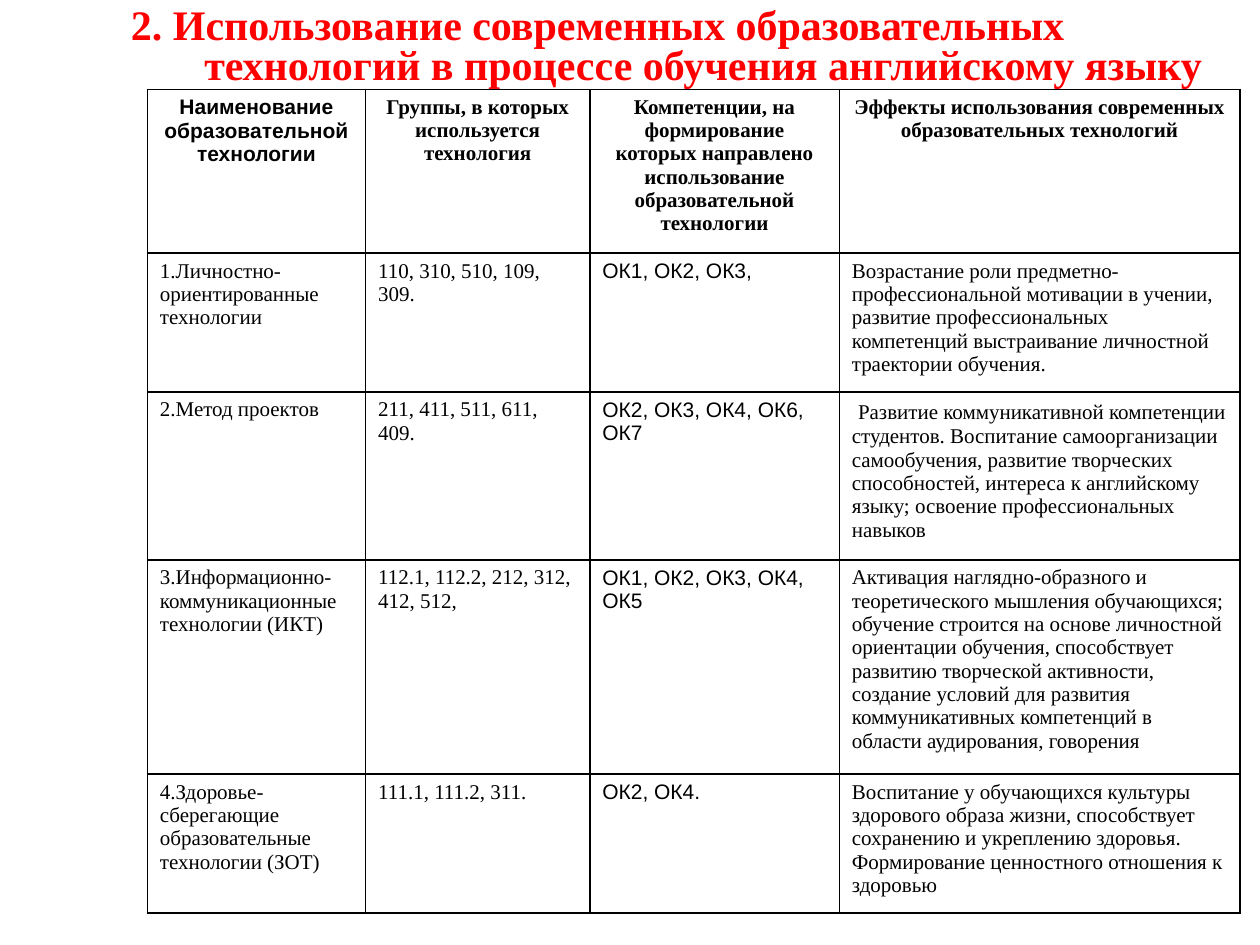
from lxml import etree
from pptx import Presentation, util as u
from pptx.dml.color import RGBColor
from pptx.enum import text
from pptx.oxml.ns import qn

SERIF, SANS = "Times New Roman", "Arial"
BLACK, RED, WHITE = "000000", "FF0000", "FFFFFF"
LEFT, CENTER, JUSTIFY = text.PP_ALIGN.LEFT, text.PP_ALIGN.CENTER, text.PP_ALIGN.JUSTIFY

TITLE = ("2. Использование современных образовательных технологий "
         "в процессе обучения английскому языку")
COLUMN_WIDTHS = [4.4, 4.52, 5.03, 8.08]
ROW_HEIGHTS = [3.15, 2.67, 3.23, 4.32, 2.67]
HEADERS = [
    "Наименование образовательной технологии",
    "Группы, в которых используется технология",
    "Компетенции, на формирование которых направлено использование "
    "образовательной технологии",
    "Эффекты использования современных образовательных технологий",
]
TECHNOLOGIES = [
    ["1.Личностно-ориентированные технологии", "110, 310, 510, 109, 309.",
     "ОК1, ОК2, ОК3,",
     "Возрастание роли предметно-профессиональной мотивации в учении, развитие "
     "профессиональных компетенций выстраивание личностной траектории обучения."],
    ["2.Метод проектов", "211, 411, 511, 611, 409.",
     "ОК2, ОК3, ОК4, ОК6, ОК7",
     "Развитие коммуникативной компетенции студентов. Воспитание самоорганизации "
     "самообучения, развитие творческих способностей, интереса к английскому языку; "
     "освоение профессиональных навыков"],
    ["3.Информационно-коммуникационные технологии (ИКТ)",
     "112.1, 112.2, 212, 312, 412, 512,", "ОК1, ОК2, ОК3, ОК4, ОК5",
     "Активация наглядно-образного и теоретического мышления обучающихся; обучение "
     "строится на основе личностной ориентации обучения, способствует развитию "
     "творческой активности, создание условий для развития коммуникативных "
     "компетенций в области аудирования, говорения"],
    ["4.Здоровье-сберегающие образовательные технологии (ЗОТ)",
     "111.1, 111.2, 311.", "ОК2, ОК4.",
     "Воспитание у обучающихся культуры здорового образа жизни, способствует "
     "сохранению и укреплению здоровья. Формирование ценностного отношения к здоровью"],
]


def color(hex_value):
    return RGBColor.from_string(hex_value)


def add_text(paragraph, content, *, font=SERIF, size=12, bold=False,
             hex_value=BLACK, align=LEFT):
    """Append a formatted run to a paragraph."""
    paragraph.alignment = align
    run = paragraph.add_run()
    run.text = content
    run.font.name = font
    run.font.size = u.Pt(size)
    run.font.bold = bold
    run.font.color.rgb = color(hex_value)


def style_cell(cell):
    """Give a cell a white fill and thin black borders."""
    cell.fill.solid()
    cell.fill.fore_color.rgb = color(WHITE)
    properties = cell._tc.get_or_add_tcPr()
    for position, side in enumerate(("lnL", "lnR", "lnT", "lnB")):
        border = etree.Element(qn(f"a:{side}"), w=str(u.Pt(1)))
        fill = etree.SubElement(border, qn("a:solidFill"))
        etree.SubElement(fill, qn("a:srgbClr"), val=BLACK)
        properties.insert(position, border)


def add_title(slide, left, top, width, height):
    shape = slide.shapes.add_textbox(u.Cm(left), u.Cm(top), u.Cm(width), u.Cm(height))
    frame = shape.text_frame
    frame.word_wrap = True
    frame.vertical_anchor = text.MSO_ANCHOR.MIDDLE
    paragraph = frame.paragraphs[0]
    paragraph.line_spacing = 0.8
    # Hanging indent for the second line
    indent = u.Cm(1.48)
    properties = paragraph._p.get_or_add_pPr()
    properties.set("marL", str(indent))
    properties.set("indent", str(-indent))
    add_text(paragraph, TITLE, size=24, bold=True, hex_value=RED)


def add_technology_table(slide, left, top):
    shape = slide.shapes.add_table(
        len(ROW_HEIGHTS), len(COLUMN_WIDTHS), u.Cm(left), u.Cm(top),
        u.Cm(sum(COLUMN_WIDTHS)), u.Cm(sum(ROW_HEIGHTS)))
    table = shape.table
    table.horz_banding = False
    for column, width in zip(table.columns, COLUMN_WIDTHS):
        column.width = u.Cm(width)
    for row, height in zip(table.rows, ROW_HEIGHTS):
        row.height = u.Cm(height)

    # Header row: only the first heading is sans serif
    for index, heading in enumerate(HEADERS):
        cell = table.cell(0, index)
        style_cell(cell)
        add_text(cell.text_frame.paragraphs[0], heading, bold=True, align=CENTER,
                 font=SANS if index == 0 else SERIF)

    # Body rows: names justified, competences sans serif
    formats = [{"align": JUSTIFY}, {}, {"font": SANS}, {}]
    for row_index, values in enumerate(TECHNOLOGIES, start=1):
        for index, (value, options) in enumerate(zip(values, formats)):
            cell = table.cell(row_index, index)
            style_cell(cell)
            paragraph = cell.text_frame.paragraphs[0]
            if value.startswith("Развитие"):
                add_text(paragraph, " ", size=14)
            add_text(paragraph, value, **options)


def main():
    presentation = Presentation()
    presentation.slide_width, presentation.slide_height = u.Cm(25.4), u.Cm(19.05)
    slide = presentation.slides.add_slide(presentation.slide_layouts[6])
    add_title(slide, 2.39, -0.41, 22.43, 2.77)
    add_technology_table(slide, 2.97, 1.8)
    presentation.save("out.pptx")


if __name__ == "__main__":
    main()
